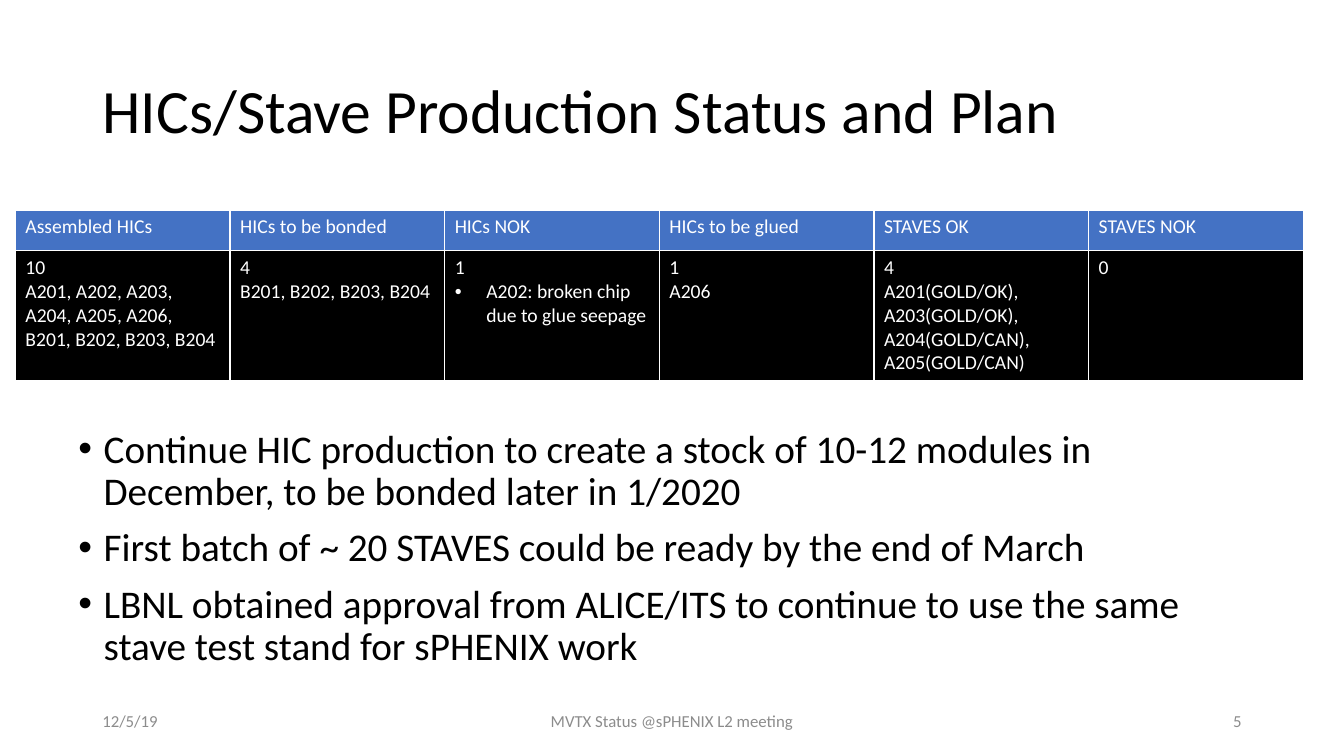
from lxml.etree import SubElement
from pptx import Presentation
from pptx.dml.color import RGBColor
from pptx.enum.text import MSO_ANCHOR, MSO_AUTO_SIZE, PP_ALIGN
from pptx.oxml.ns import qn
from pptx.util import Pt

COLORS = {"ink": "000000", "paper": "FFFFFF", "head": "4472C4", "muted": "8C8C8C"}

HEADS = ["Assembled HICs", "HICs to be bonded", "HICs NOK",
         "HICs to be glued", "STAVES OK", "STAVES NOK"]
COUNTS = [
    ["10", "A201, A202, A203, A204, A205, A206, B201, B202, B203, B204"],
    ["4", "B201, B202, B203, B204"],
    ["1", "• A202: broken chip due to glue seepage"],
    ["1", "A206"],
    ["4", "A201(GOLD/OK), A203(GOLD/OK), A204(GOLD/CAN), A205(GOLD/CAN)"],
    ["0"],
]
PLANS = [
    "• Continue HIC production to create a stock of 10-12 modules in December, "
    "to be bonded later in 1/2020",
    "• First batch of ~ 20 STAVES could be ready by the end of March",
    "• LBNL obtained approval from ALICE/ITS to continue to use the same "
    "stave test stand for sPHENIX work",
]


def color(name):
    return RGBColor.from_string(COLORS[name])


def write(frame, lines, font="Calibri", size=14, ink="ink", align=PP_ALIGN.LEFT,
          space=None, before=0, indent=0):
    """Fill a text frame; a line that starts with a bullet hangs by indent."""
    for i, line in enumerate(lines):
        para = frame.paragraphs[0] if i == 0 else frame.add_paragraph()
        para.alignment = align
        para.space_before = Pt(before)
        if space:
            para.line_spacing = space
        if line.startswith("• "):
            line = line[2:]
            props = para._p.get_or_add_pPr()
            props.set("marL", str(Pt(indent)))
            props.set("indent", str(-Pt(indent)))
            SubElement(props, qn("a:buFont"), typeface="Arial")
            SubElement(props, qn("a:buChar"), char="•")
        run = para.add_run()
        run.text = line
        run.font.name = font
        run.font.size = Pt(size)
        run.font.color.rgb = color(ink)


class Deck:
    def __init__(self, width, height, font="Calibri"):
        self.font = font
        self.prs = Presentation()
        self.prs.slide_width, self.prs.slide_height = Pt(width), Pt(height)
        self.slide = self.prs.slides.add_slide(self.prs.slide_layouts[5])

    def title(self, text, left, top, width, height):
        shape = self.slide.shapes.title
        shape.left, shape.top = Pt(left), Pt(top)
        shape.width, shape.height = Pt(width), Pt(height)
        frame = shape.text_frame
        frame.auto_size = MSO_AUTO_SIZE.NONE
        frame.vertical_anchor = MSO_ANCHOR.MIDDLE
        write(frame, [text], font=self.font, size=44, space=0.9)

    def text(self, lines, left, top, width, height, anchor=MSO_ANCHOR.TOP, **style):
        box = self.slide.shapes.add_textbox(Pt(left), Pt(top), Pt(width), Pt(height))
        frame = box.text_frame
        frame.word_wrap = True
        frame.vertical_anchor = anchor
        write(frame, lines, font=self.font, **style)

    def cell(self, cell, lines, fill):
        write(cell.text_frame, lines, font=self.font, ink="paper", indent=22.5)
        props = cell._tc.get_or_add_tcPr()
        for side in "LRTB":
            line = SubElement(props, qn("a:ln" + side), w=str(Pt(1)))
            solid = SubElement(line, qn("a:solidFill"))
            SubElement(solid, qn("a:srgbClr"), val=COLORS["paper"])
        cell.fill.solid()
        cell.fill.fore_color.rgb = color(fill)

    def table(self, heads, body, left, top, width, heights):
        frame = self.slide.shapes.add_table(
            2, len(heads), Pt(left), Pt(top), Pt(width), Pt(sum(heights)))
        grid = frame.table
        for row, height in zip(grid.rows, heights):
            row.height = Pt(height)
        for i, (head, lines) in enumerate(zip(heads, body)):
            grid.columns[i].width = Pt(width / len(heads))
            self.cell(grid.cell(0, i), [head], "head")
            self.cell(grid.cell(1, i), lines, "ink")


def main():
    deck = Deck(960, 540)
    deck.title("HICs/Stave Production Status and Plan", 66, 28.75, 828, 104.4)

    # Production counts
    deck.table(HEADS, COUNTS, 11, 150, 920, [29.2, 92])

    # Plan
    deck.text(PLANS, 49, 303, 828, 183.6, size=28, space=0.9, before=10, indent=18)

    # Footer
    for text, left, width, align in [
        ("12/5/19", 66, 216, PP_ALIGN.LEFT),
        ("MVTX Status @sPHENIX L2 meeting", 318, 324, PP_ALIGN.CENTER),
        ("5", 678, 216, PP_ALIGN.RIGHT),
    ]:
        deck.text([text], left, 500.5, width, 28.75, anchor=MSO_ANCHOR.MIDDLE,
                  size=12, ink="muted", align=align)

    deck.prs.save("out.pptx")


if __name__ == "__main__":
    main()
